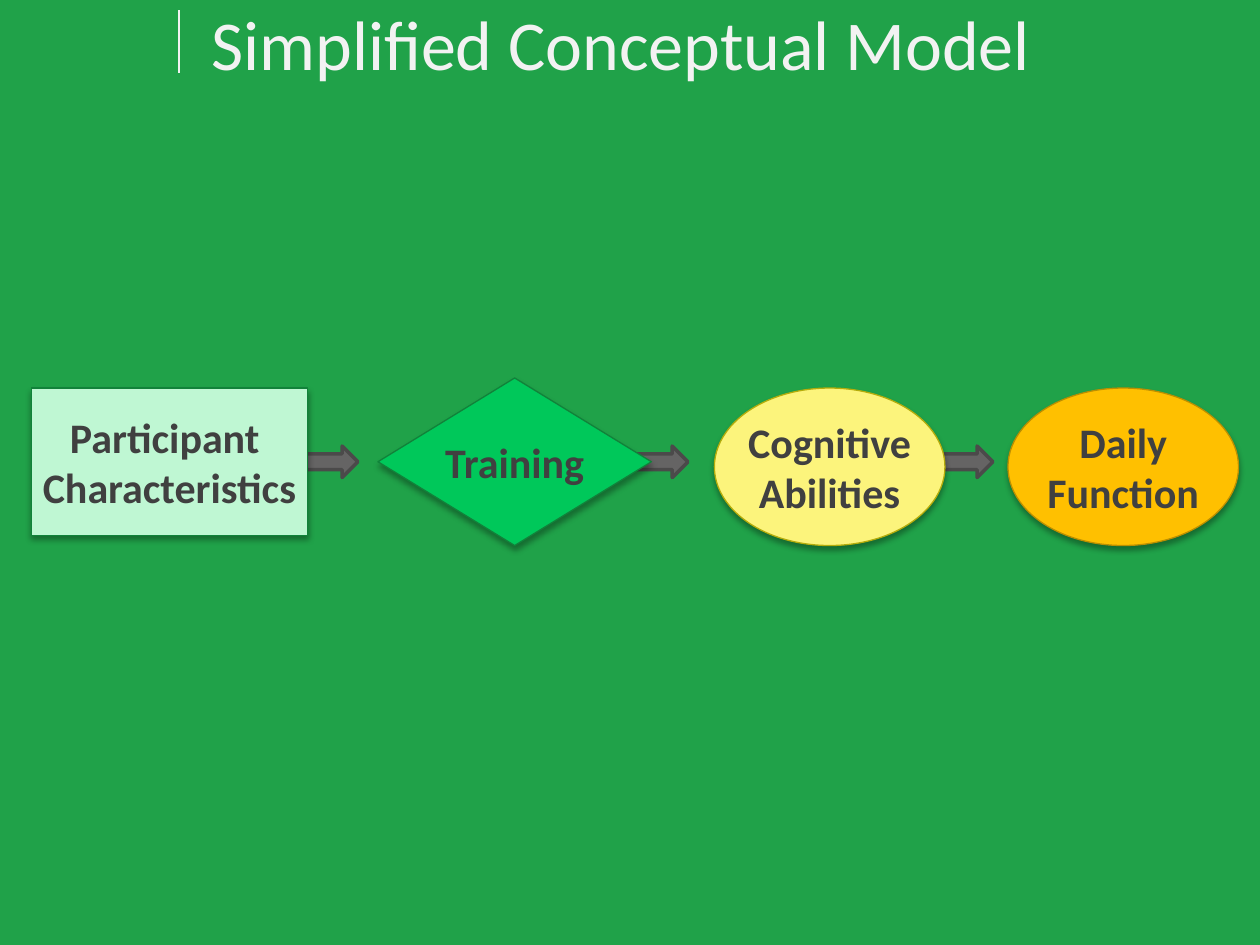
from dataclasses import dataclass

import pptx
import pptx.dml.color
import pptx.enum.shapes
import pptx.enum.text
import pptx.oxml
import pptx.oxml.ns
import pptx.util
from pptx.util import Inches

SHAPE = pptx.enum.shapes.MSO_SHAPE
ALIGN = pptx.enum.text.PP_ALIGN


@dataclass(frozen=True)
class Theme:
    font: str = "Calibri"
    title_size: int = 40
    label_size: int = 24
    background: str = "20A249"
    light: str = "F2F2F2"
    dark: str = "404040"
    arrow: str = "656464"
    arrow_edge: str = "4B4A4A"
    mint: str = "BFF7D3"
    green: str = "00C85A"
    green_edge: str = "11823A"
    yellow: str = "FCF47C"
    yellow_edge: str = "B5AD0B"
    amber: str = "FFC000"
    amber_edge: str = "BC8F00"


THEME = Theme()


def rgb(value):
    return pptx.dml.color.RGBColor.from_string(value)


def write_text(box, text, *, size, color, bold=False, align=ALIGN.LEFT, wrap=True):
    """Write each line of text as its own paragraph, centred vertically."""
    frame = box.text_frame
    frame.word_wrap = wrap
    frame.vertical_anchor = pptx.enum.text.MSO_ANCHOR.MIDDLE
    for index, line in enumerate(text.split("\n")):
        para = frame.add_paragraph() if index else frame.paragraphs[0]
        para.alignment = align
        span = para.add_run()
        span.text = line
        span.font.name = THEME.font
        span.font.size = pptx.util.Pt(size)
        span.font.bold = bold
        span.font.color.rgb = rgb(color)


def add_figure(page, kind, left, top, width, height, fill, edge, edge_width):
    figure = page.shapes.add_shape(
        kind, Inches(left), Inches(top), Inches(width), Inches(height))
    figure.shadow.inherit = False
    figure.fill.solid()
    figure.fill.fore_color.rgb = rgb(fill)
    figure.line.color.rgb = rgb(edge)
    figure.line.width = pptx.util.Pt(edge_width)
    return figure


def add_drop_shadow(figure):
    effects = figure._element.spPr.find(pptx.oxml.ns.qn("a:effectLst"))
    effects.append(pptx.oxml.parse_xml(
        f'<a:outerShdw {pptx.oxml.ns.nsdecls("a")} blurRad="{pptx.util.Pt(3.5)}" '
        f'dist="{pptx.util.Pt(2.2)}" dir="5400000" rotWithShape="0">'
        '<a:srgbClr val="000000"><a:alpha val="32000"/></a:srgbClr></a:outerShdw>'))


def add_stage(page, kind, text, left, top, width, height, fill, edge):
    stage = add_figure(page, kind, left, top, width, height, fill, edge, 0.75)
    add_drop_shadow(stage)
    write_text(stage, text, size=THEME.label_size, color=THEME.dark, bold=True,
               align=ALIGN.CENTER, wrap=False)


def add_title(page, text):
    rule = page.shapes.add_connector(
        pptx.enum.shapes.MSO_CONNECTOR.STRAIGHT,
        Inches(1.42), Inches(0.08), Inches(1.42), Inches(0.58))
    rule.line.color.rgb = rgb(THEME.light)
    rule.line.width = pptx.util.Pt(0.75)
    rule._element.spPr.append(pptx.oxml.parse_xml(
        f'<a:effectLst {pptx.oxml.ns.nsdecls("a")}/>'))
    box = page.shapes.add_textbox(
        Inches(1.58), Inches(0), Inches(8.33), Inches(0.67))
    write_text(box, text, size=THEME.title_size, color=THEME.light)


def main():
    deck = pptx.Presentation()
    deck.slide_width, deck.slide_height = Inches(10), Inches(7.5)
    page = deck.slides.add_slide(deck.slide_layouts[6])
    page.background.fill.solid()
    page.background.fill.fore_color.rgb = rgb(THEME.background)

    add_title(page, "Simplified Conceptual Model")
    for left in (2.42, 5.04, 7.46):
        add_figure(page, SHAPE.RIGHT_ARROW, left, 3.54, 0.42, 0.25,
                   THEME.arrow, THEME.arrow_edge, 2)

    stages = (
        (SHAPE.RECTANGLE, "Participant \nCharacteristics", 0.25, 3.08, 2.19, 1.17,
         THEME.mint, THEME.green_edge),
        (SHAPE.DIAMOND, "Training", 3, 3, 2.17, 1.33,
         THEME.green, THEME.green_edge),
        (SHAPE.OVAL, "Cognitive\nAbilities", 5.67, 3.08, 1.83, 1.25,
         THEME.yellow, THEME.yellow_edge),
        (SHAPE.OVAL, "Daily\nFunction", 8, 3.08, 1.83, 1.25,
         THEME.amber, THEME.amber_edge),
    )
    for stage in stages:
        add_stage(page, *stage)
    deck.save("out.pptx")


if __name__ == "__main__":
    main()
